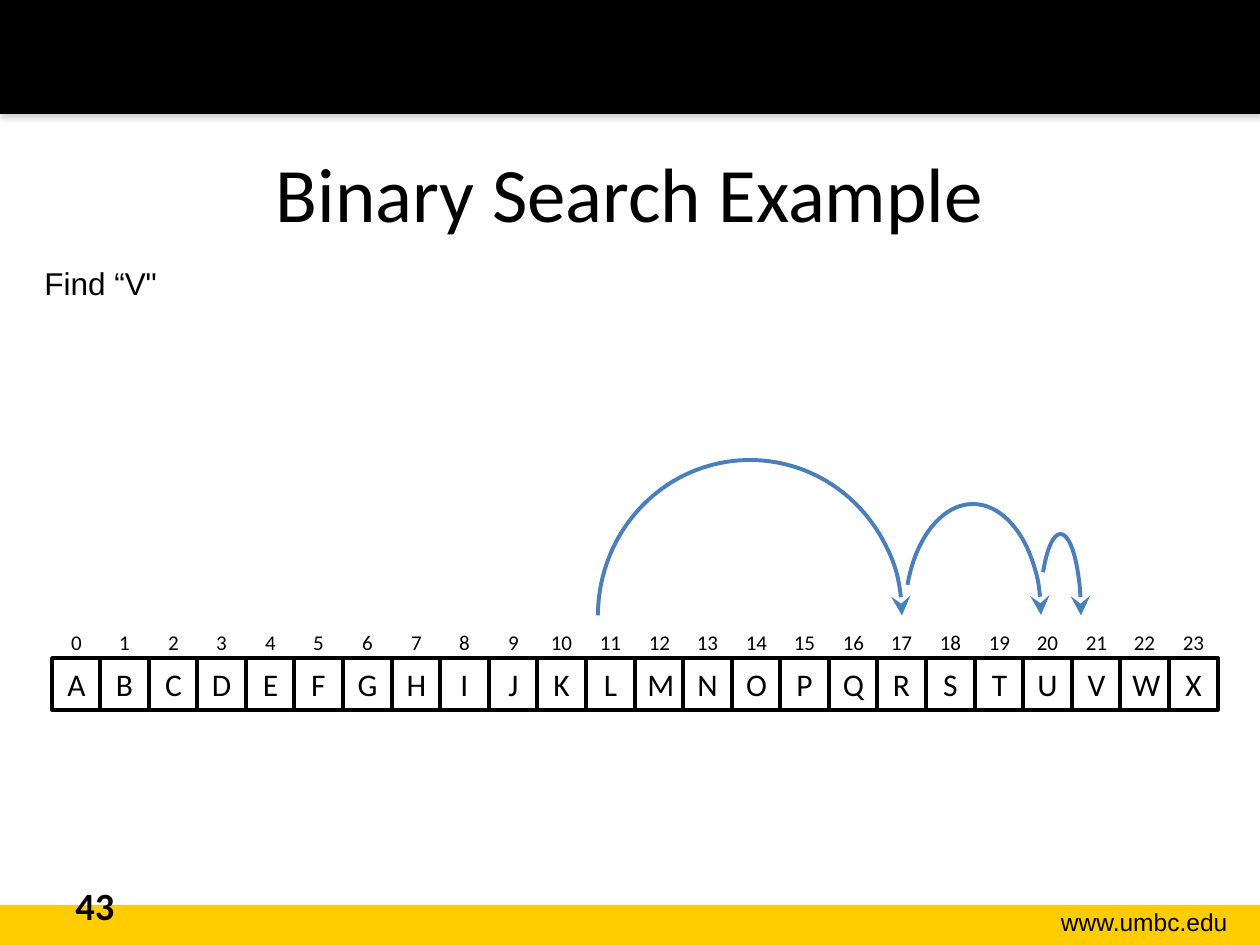
from lxml import etree
from pptx import Presentation
from pptx.dml.color import RGBColor
from pptx.enum.shapes import MSO_SHAPE
from pptx.enum.text import MSO_ANCHOR, PP_ALIGN
from pptx.oxml.ns import qn
from pptx.util import Emu, Pt

RECTANGLE, ARC = MSO_SHAPE.RECTANGLE, MSO_SHAPE.ARC
LEFT, CENTER, RIGHT = PP_ALIGN.LEFT, PP_ALIGN.CENTER, PP_ALIGN.RIGHT
TOP, MIDDLE = MSO_ANCHOR.TOP, MSO_ANCHOR.MIDDLE
EMU_PER_PX = 914400 / 126
COLORS = {"black": "000000", "white": "FFFFFF", "gold": "FFCC00",
          "blue": "4B7EBC", "shadow": "808080"}


def add_box(shapes, kind, box, fill=None, line=None, width=2):
    """Add a preset shape at a px box (left, top, width, height)."""
    shape = shapes.add_shape(kind, *[Emu(round(px * EMU_PER_PX)) for px in box])
    shape.shadow.inherit = False
    if fill:
        shape.fill.solid()
        shape.fill.fore_color.rgb = RGBColor.from_string(COLORS[fill])
    else:
        shape.fill.background()
    if line:
        shape.line.color.rgb = RGBColor.from_string(COLORS[line])
        shape.line.width = Pt(width)
    else:
        shape.line.fill.background()
    return shape


def write_text(text, shape=None, box=None, size=18, font="Calibri", bold=False,
               align=LEFT, anchor=TOP, wrap=True):
    """Write text into a shape, or into a new text box at a px box."""
    if shape is None:
        shape = slide.shapes.add_textbox(*[Emu(round(px * EMU_PER_PX)) for px in box])
    frame = shape.text_frame
    frame.word_wrap = wrap
    frame.vertical_anchor = anchor
    paragraph = frame.paragraphs[0]
    paragraph.alignment = align
    run = paragraph.add_run()
    run.text = text
    run.font.name = font
    run.font.size = Pt(size)
    run.font.bold = bold
    run.font.color.rgb = RGBColor.from_string(COLORS["black"])


presentation = Presentation()
presentation.slide_width = Emu(round(1260 * EMU_PER_PX))
presentation.slide_height = Emu(round(945 * EMU_PER_PX))
slide = presentation.slides.add_slide(presentation.slide_layouts[6])

# Footer and header bands, the header with a soft shadow
add_box(slide.shapes, RECTANGLE, (0, 905, 1260, 40), fill="gold")
header = add_box(slide.shapes, RECTANGLE, (0, 0, 1260, 114), fill="black")
effects = header._element.spPr.find(qn("a:effectLst"))
shadow = etree.SubElement(effects, qn("a:outerShdw"), blurRad="40000", dist="23000",
                          dir="5400000", rotWithShape="0")
shadow_color = etree.SubElement(shadow, qn("a:srgbClr"), val=COLORS["shadow"])
etree.SubElement(shadow_color, qn("a:alpha"), val="35000")

# Title, footer text and search target
write_text("www.umbc.edu", box=(989, 901, 251, 43), size=14, font="Arial", align=RIGHT)
write_text("Binary Search Example", box=(63, 113, 1134, 158), size=44,
           align=CENTER, anchor=MIDDLE)
write_text("43", box=(63, 876, 294, 50), size=22, bold=True)
write_text("Find “V\"", box=(32, 258, 140, 50), font="Arial", wrap=False)

# Array: a row of indices, then a row of letters over its lower part
letters = "ABCDEFGHIJKLMNOPQRSTUVWX"
rows = [
    ([str(index) for index in range(len(letters))], 616, 12, "white"),
    (letters, 658, 18, "black"),
]
for labels, top, size, line in rows:
    group = slide.shapes.add_group_shape()
    for index, label in enumerate(labels):
        left = 52 + index * 1166 // len(letters)
        cell = add_box(group.shapes, RECTANGLE, (left, top, 49, 52), fill="white", line=line)
        write_text(label, shape=cell, size=size, align=CENTER, anchor=MIDDLE)

# Search jumps: arcs with an arrowhead at the right end
jumps = [
    ((598, 460, 304, 311), 108),
    ((905, 504, 136, 222), 122.83),
    ((1040, 534, 41, 163), 148.8),
]
for box, start in jumps:
    jump = add_box(slide.shapes, ARC, box, line="blue", width=2.25)
    jump.adjustments[0] = start
    jump.adjustments[1] = 0
    etree.SubElement(jump.line._get_or_add_ln(), qn("a:tailEnd"), type="stealth",
                     w="lg", len="lg")

presentation.save("out.pptx")
